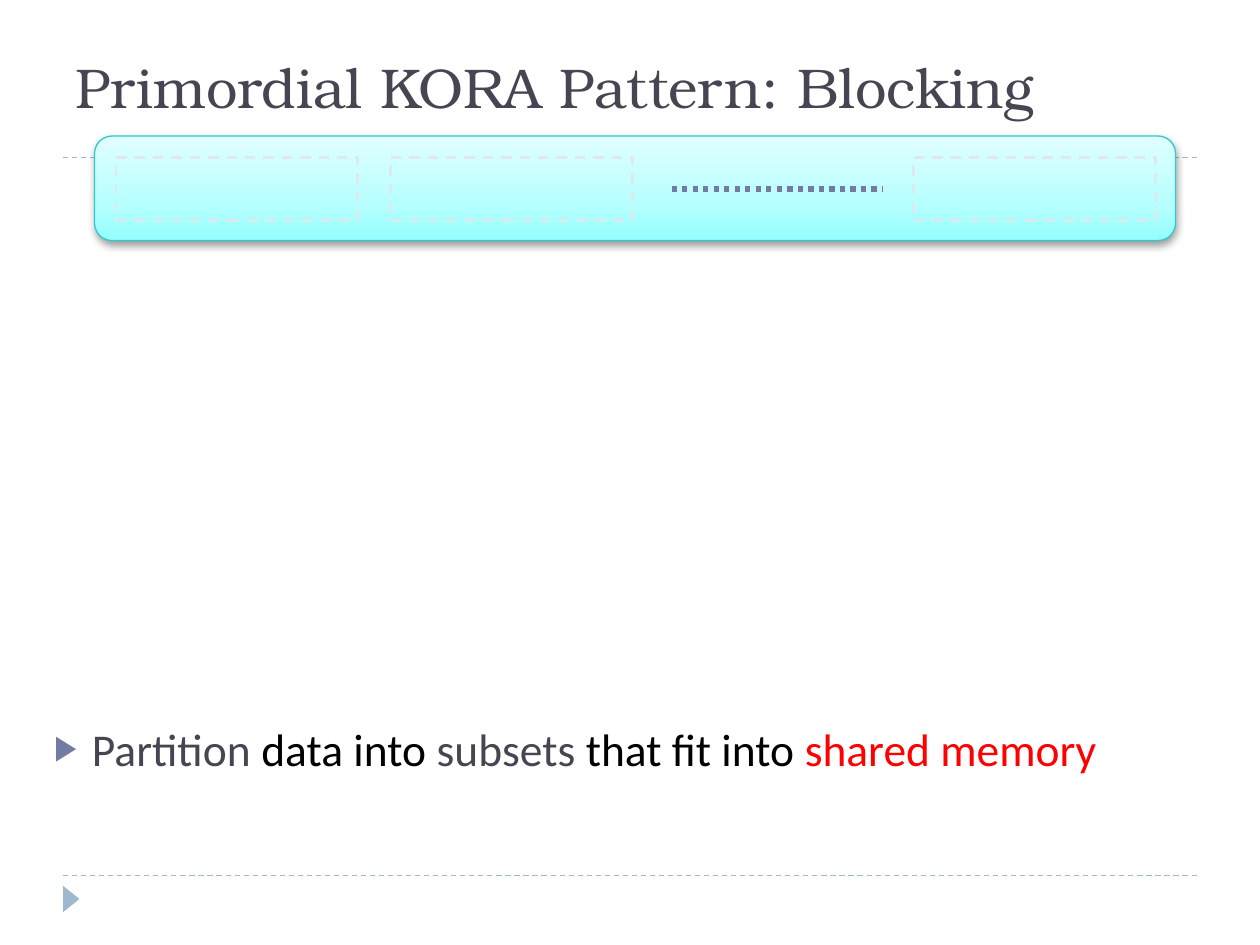
from lxml import etree
from pptx import Presentation
from pptx.dml.color import RGBColor
from pptx.enum.dml import MSO_LINE
from pptx.enum.shapes import MSO_CONNECTOR, MSO_SHAPE
from pptx.enum.text import MSO_ANCHOR, MSO_AUTO_SIZE, PP_ALIGN
from pptx.oxml import parse_xml
from pptx.oxml.ns import qn
from pptx.util import Inches, Pt

DASH, DOTS = MSO_LINE.DASH, MSO_LINE.ROUND_DOT
STRAIGHT = MSO_CONNECTOR.STRAIGHT
RECT, ROUNDED, TRIANGLE = MSO_SHAPE.RECTANGLE, MSO_SHAPE.ROUNDED_RECTANGLE, MSO_SHAPE.ISOSCELES_TRIANGLE
TOP, BOTTOM = MSO_ANCHOR.TOP, MSO_ANCHOR.BOTTOM
NO_AUTOFIT, LEFT = MSO_AUTO_SIZE.NONE, PP_ALIGN.LEFT
NS = 'xmlns:a="http://schemas.openxmlformats.org/drawingml/2006/main"'

COLORS = {
    "ink": "464653", "black": "000000", "red": "FF0000", "accent": "727CA3",
    "rule": "9FB8CD", "subset": "DDE9EC", "memory_edge": "2ECBCB",
}
MEMORY_STOPS = [(0, "95FFFF"), (35, "B6FFFF"), (100, "E1FFFF")]

TITLE = [("Primordial KORA Pattern: Blocking", "ink")]
STEP = [
    ("Partition", "ink"), (" data into ", "black"), ("subsets", "ink"),
    (" that fit into ", "black"), ("shared memory", "red"),
]
RULE_TOPS = [1.25, 6.95]
SUBSET_LEFTS = [0.92, 3.1, 7.25]
SUBSET_TOP, SUBSET_WIDTH, SUBSET_HEIGHT = 1.25, 1.92, 0.5


def color(name):
    return RGBColor.from_string(COLORS[name])


def style_line(line, name, width, dash=None):
    line.color.rgb = color(name)
    line.width = Pt(width)
    if dash:
        line.dash_style = dash


def add_line(slide, left, right, y, name, width, dash):
    rule = slide.shapes.add_connector(STRAIGHT, Inches(left), Inches(y), Inches(right), Inches(y))
    style_line(rule.line, name, width, dash)
    etree.SubElement(rule._element.spPr, qn("a:effectLst"))


def add_box(slide, kind, *frame):
    box = slide.shapes.add_shape(kind, *map(Inches, frame))
    box.shadow.inherit = False
    return box


def set_text(placeholder, runs, *, frame, size, font, anchor, bullet=None):
    placeholder.left, placeholder.top, placeholder.width, placeholder.height = map(Inches, frame)
    text = placeholder.text_frame
    text.word_wrap = True
    text.auto_size = NO_AUTOFIT
    text.vertical_anchor = anchor
    paragraph = text.paragraphs[0]
    if bullet:
        props = paragraph._p.get_or_add_pPr()
        props.set("marL", str(Inches(0.3)))
        props.set("indent", str(Inches(-0.3)))
        for mark in (
            f'<a:buClr {NS}><a:srgbClr val="{COLORS["accent"]}"/></a:buClr>',
            f'<a:buSzPct {NS} val="76000"/>',
            f'<a:buChar {NS} char="{bullet}"/>',
        ):
            props.append(parse_xml(mark))
    paragraph.alignment = LEFT
    paragraph.space_before = Pt(0)
    for words, name in runs:
        run = paragraph.add_run()
        run.text = words
        run.font.size = Pt(size)
        run.font.name = font
        run.font.color.rgb = color(name)


def add_memory(slide):
    memory = add_box(slide, ROUNDED, 0.75, 1.08, 8.58, 0.83)
    style_line(memory.line, "memory_edge", 0.75)
    stops = "".join(
        f'<a:gs pos="{position * 1000}"><a:srgbClr val="{value}"/></a:gs>'
        for position, value in MEMORY_STOPS
    )
    props = memory._element.spPr
    props.find(qn("a:ln")).addprevious(parse_xml(
        f'<a:gradFill {NS} rotWithShape="1"><a:gsLst>{stops}</a:gsLst>'
        '<a:lin ang="16200000" scaled="0"/></a:gradFill>'
    ))
    props.find(qn("a:effectLst")).append(parse_xml(
        f'<a:outerShdw {NS} blurRad="{Pt(5)}" dist="{Pt(1.6)}" dir="5400000" rotWithShape="0">'
        f'<a:srgbClr val="{COLORS["black"]}"><a:alpha val="38000"/></a:srgbClr></a:outerShdw>'
    ))


def main():
    deck = Presentation()
    deck.slide_width, deck.slide_height = Inches(10), Inches(7.5)
    slide = deck.slides.add_slide(deck.slide_layouts[1])

    for y in RULE_TOPS:
        add_line(slide, 0.5, 9.5, y, "rule", 0.75, DASH)
    marker = add_box(slide, TRIANGLE, 0.46, 7.07, 0.21, 0.13)
    marker.rotation = 90
    marker.fill.solid()
    marker.fill.fore_color.rgb = color("rule")
    marker.line.fill.background()

    add_memory(slide)
    set_text(slide.shapes.title, TITLE, frame=(0.5, 0.23, 9.28, 0.77), size=32,
             font="TeX Gyre Bonum", anchor=BOTTOM)
    set_text(slide.placeholders[1], STEP, frame=(0.33, 5.67, 9.25, 1.58), size=26,
             font="Calibri", anchor=TOP, bullet="▶")

    for left in SUBSET_LEFTS:
        subset = add_box(slide, RECT, left, SUBSET_TOP, SUBSET_WIDTH, SUBSET_HEIGHT)
        subset.fill.background()
        style_line(subset.line, "subset", 1.5, DASH)
    add_line(slide, 5.33, 7, SUBSET_TOP + SUBSET_HEIGHT / 2, "accent", 3, DOTS)

    deck.save("out.pptx")


if __name__ == "__main__":
    main()
